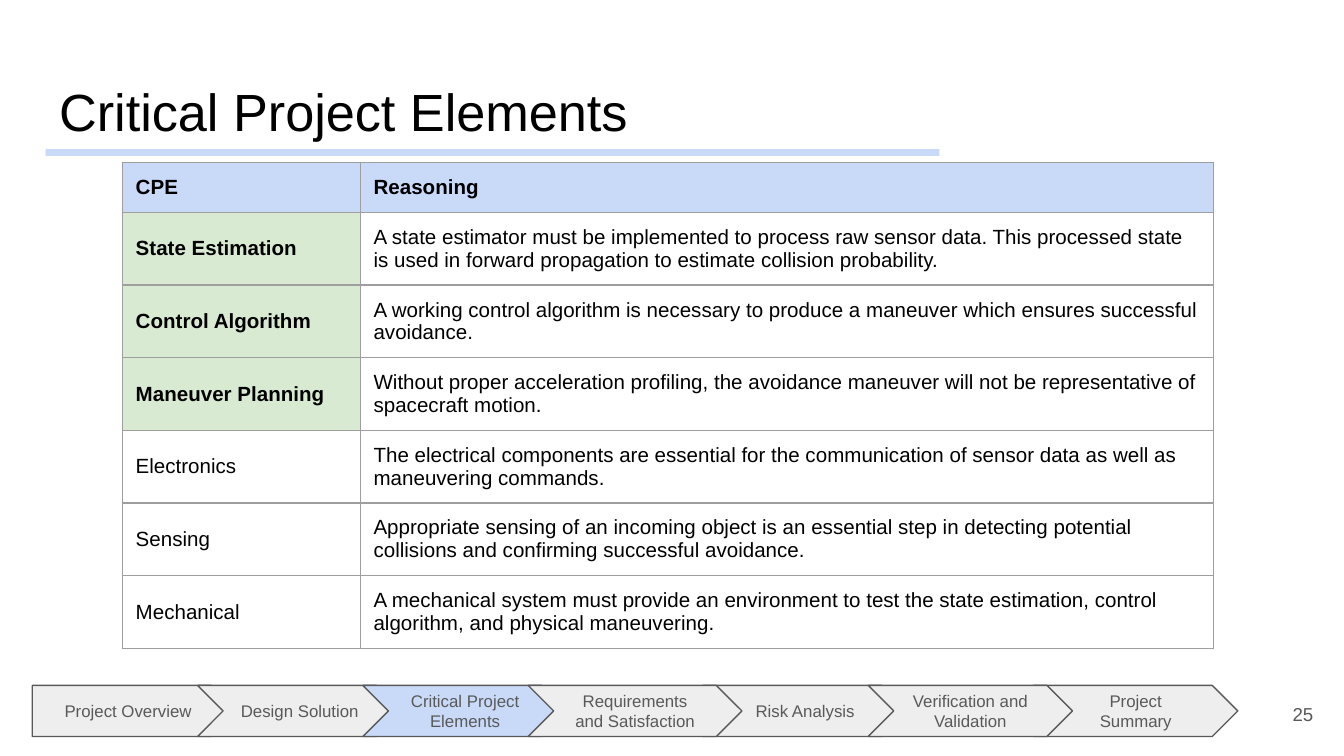
from dataclasses import dataclass

from lxml.etree import SubElement
from pptx import Presentation
from pptx.dml.color import RGBColor
from pptx.enum.shapes import MSO_SHAPE as Shape
from pptx.enum.text import MSO_ANCHOR as Anchor, MSO_AUTO_SIZE as AutoSize, PP_ALIGN as Align
from pptx.oxml.ns import qn
from pptx.util import Inches, Pt

COLORS = {
    "blue": "C9DAF8",
    "green": "D9EAD3",
    "gray": "EEEEEE",
    "border": "9E9E9E",
    "muted": "595959",
    "black": "000000",
}
FONT = "Arial"
INSET = 0.1
STEP_OVERLAP = 0.29


@dataclass
class Step:
    label: str
    layer: int  # stacking order, back to front
    width: float = 1.52
    shape: Shape = Shape.CHEVRON
    color: str = "gray"


@dataclass
class Element:
    name: str
    reasoning: str
    critical: bool = False


STEPS = [
    Step("Project Overview", 0, shape=Shape.PENTAGON),
    Step("Design Solution", 1),
    Step("Critical Project Elements", 2, color="blue"),
    Step("Requirements and Satisfaction", 5, width=1.59),
    Step("Risk Analysis", 4),
    Step("Verification and Validation", 6),
    Step("Project Summary", 3),
]

ELEMENTS = [
    Element("State Estimation", "A state estimator must be implemented to process raw sensor data. "
            "This processed state is used in forward propagation to estimate collision probability.", True),
    Element("Control Algorithm", "A working control algorithm is necessary to produce a maneuver "
            "which ensures successful avoidance.", True),
    Element("Maneuver Planning", "Without proper acceleration profiling, the avoidance maneuver "
            "will not be representative of spacecraft motion.", True),
    Element("Electronics", "The electrical components are essential for the communication of "
            "sensor data as well as maneuvering commands."),
    Element("Sensing", "Appropriate sensing of an incoming object is an essential step in "
            "detecting potential collisions and confirming successful avoidance."),
    Element("Mechanical", "A mechanical system must provide an environment to test the state "
            "estimation, control algorithm, and physical maneuvering."),
]


def rgb(color: str) -> RGBColor:
    return RGBColor.from_string(COLORS[color])


def write(frame, text: str, size: float, color: str, align=Align.LEFT, bold: bool = False) -> None:
    paragraph = frame.paragraphs[0]
    paragraph.alignment = align
    run = paragraph.add_run()
    run.text = text
    run.font.name = FONT
    run.font.size = Pt(size)
    run.font.bold = bold
    run.font.color.rgb = rgb(color)


def set_insets(holder) -> None:
    """Give a text frame or a table cell equal margins."""
    holder.margin_left = holder.margin_right = Inches(INSET)
    holder.margin_top = holder.margin_bottom = Inches(INSET)


def set_frame(frame, anchor) -> None:
    set_insets(frame)
    frame.word_wrap = True
    frame.auto_size = AutoSize.NONE
    frame.vertical_anchor = anchor


def add_step(slide, step: Step, left: float) -> None:
    arrow = slide.shapes.add_shape(step.shape, Inches(left), Inches(5.1), Inches(step.width), Inches(0.38))
    arrow.shadow.inherit = False
    arrow.fill.solid()
    arrow.fill.fore_color.rgb = rgb(step.color)
    arrow.line.color.rgb = rgb("muted")
    arrow.line.width = Pt(0.75)
    set_frame(arrow.text_frame, Anchor.MIDDLE)
    write(arrow.text_frame, step.label, 9, "muted", Align.CENTER)


def add_borders(cell) -> None:
    properties = cell._tc.get_or_add_tcPr()
    for side in ("lnL", "lnR", "lnT", "lnB"):
        line = SubElement(properties, qn(f"a:{side}"), w=str(Pt(0.75)))
        fill = SubElement(line, qn("a:solidFill"))
        SubElement(fill, qn("a:srgbClr"), val=COLORS["border"])


def fill_cell(cell, text: str, color: str = "", bold: bool = False, anchor=Anchor.TOP) -> None:
    add_borders(cell)
    if color:
        cell.fill.solid()
        cell.fill.fore_color.rgb = rgb(color)
    else:
        cell.fill.background()
    set_insets(cell)
    cell.vertical_anchor = anchor
    write(cell.text_frame, text, 11, "black", bold=bold)


def add_elements_table(slide, elements: list[Element]) -> None:
    widths = [1.77, 6.35]
    heights = [0.36] + [0.54] * len(elements)
    table = slide.shapes.add_table(len(heights), len(widths), Inches(0.91), Inches(1.21),
                                   Inches(sum(widths)), Inches(sum(heights))).table
    table.first_row = table.horz_banding = False
    for column, width in zip(table.columns, widths):
        column.width = Inches(width)
    for row, height in zip(table.rows, heights):
        row.height = Inches(height)

    for column, heading in enumerate(("CPE", "Reasoning")):
        fill_cell(table.cell(0, column), heading, "blue", bold=True)
    for row, element in enumerate(elements, start=1):
        fill_cell(table.cell(row, 0), element.name, "green" if element.critical else "",
                  element.critical, Anchor.MIDDLE)
        fill_cell(table.cell(row, 1), element.reasoning)


def main() -> None:
    # Widescreen 16:9 slide
    deck = Presentation()
    deck.slide_width, deck.slide_height = Inches(10), Inches(10 * 9 / 16)
    slide = deck.slides.add_slide(deck.slide_layouts[5])

    # Progress bar: each step overlaps the one before it
    left = 0.24
    placed = []
    for step in STEPS:
        placed.append((step, left))
        left += step.width - STEP_OVERLAP
    for step, step_left in sorted(placed, key=lambda item: item[0].layer):
        add_step(slide, step, step_left)

    # Title and its underline
    underline = slide.shapes.add_shape(Shape.RECTANGLE, Inches(0.34), Inches(1.11), Inches(6.65), Inches(0.05))
    underline.shadow.inherit = False
    underline.fill.solid()
    underline.fill.fore_color.rgb = rgb("blue")
    underline.line.fill.background()

    title = slide.shapes.title
    title.left, title.top = Inches(0.34), Inches(0.49)
    title.width, title.height = Inches(9.32), Inches(0.63)
    set_frame(title.text_frame, Anchor.TOP)
    write(title.text_frame, "Critical Project Elements", 28, "black")

    # Slide number
    number = slide.shapes.add_textbox(Inches(9.27), Inches(5.1), Inches(0.6), Inches(0.43))
    set_frame(number.text_frame, Anchor.MIDDLE)
    write(number.text_frame, "25", 10, "muted", Align.RIGHT)

    add_elements_table(slide, ELEMENTS)
    deck.save("out.pptx")


if __name__ == "__main__":
    main()
